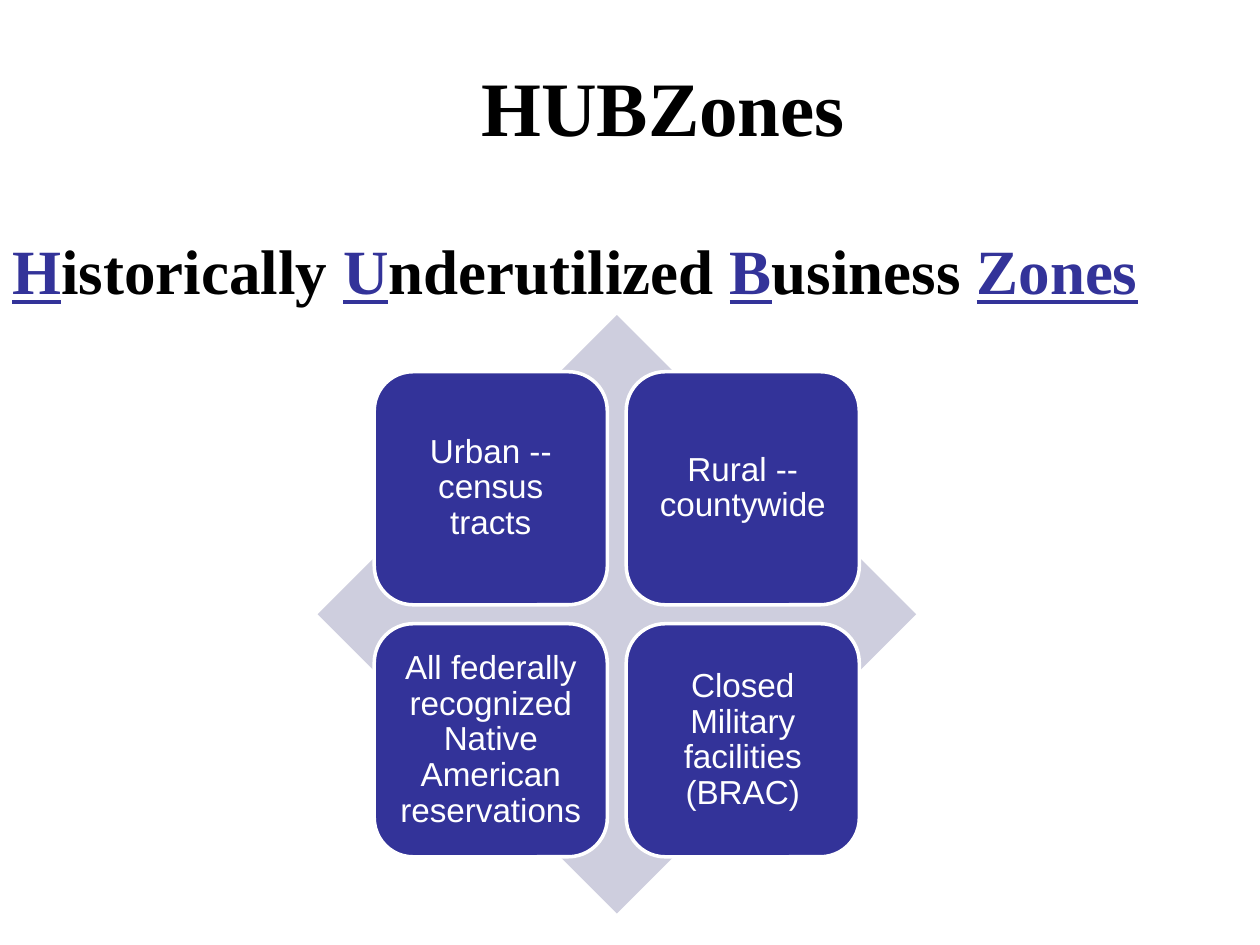
from dataclasses import dataclass
from itertools import product

from pptx import Presentation
from pptx.dml.color import RGBColor
from pptx.enum.shapes import MSO_SHAPE
from pptx.enum.text import MSO_ANCHOR, PP_ALIGN
from pptx.util import Inches, Pt


@dataclass(frozen=True)
class Theme:
    """Colours, fonts and type sizes of the slide."""
    ink: RGBColor = RGBColor(0x00, 0x00, 0x00)
    accent: RGBColor = RGBColor(0x33, 0x33, 0x99)
    pale: RGBColor = RGBColor(0xCE, 0xCE, 0xDE)
    white: RGBColor = RGBColor(0xFF, 0xFF, 0xFF)
    serif: str = "Times New Roman"
    sans: str = "Arial"
    title: int = 44
    title_gap: int = 40
    subtitle: int = 36
    card: int = 19


THEME = Theme()

ACRONYM = [("H", "istorically "), ("U", "nderutilized "),
           ("B", "usiness "), ("Zones", "")]
ZONES = ["Urban -- census tracts", "Rural -- countywide",
         "All federally recognized Native American reservations",
         "Closed Military facilities (BRAC)"]


def add_text_box(s, left, top, width, height):
    """Add a wrapping text box and return its first paragraph."""
    tf = s.shapes.add_textbox(Inches(left), Inches(top),
                              Inches(width), Inches(height)).text_frame
    tf.word_wrap = True
    return tf.paragraphs[0]


def add_run(p, text, size, color, bold=True, underline=False, font=THEME.serif):
    """Append a formatted run to a paragraph."""
    r = p.add_run()
    r.text = text
    r.font.name, r.font.size = font, Pt(size)
    r.font.bold, r.font.underline = bold, underline
    r.font.color.rgb = color


def add_filled_shape(s, kind, left, top, side, fill):
    """Add a square-framed preset shape with a flat fill and no line."""
    sp = s.shapes.add_shape(kind, Inches(left), Inches(top),
                            Inches(side), Inches(side))
    sp.shadow.inherit = False
    sp.fill.solid()
    sp.fill.fore_color.rgb = fill
    sp.line.fill.background()
    return sp


def add_card(s, left, top, side, text):
    """Add a rounded card with centred text."""
    sp = add_filled_shape(s, MSO_SHAPE.ROUNDED_RECTANGLE, left, top, side,
                          THEME.accent)
    sp.line.color.rgb = THEME.white
    sp.line.width = Pt(2)
    tf = sp.text_frame
    tf.word_wrap = True
    tf.vertical_anchor = MSO_ANCHOR.MIDDLE
    tf.margin_left = tf.margin_right = Inches(0.08)
    tf.margin_top = tf.margin_bottom = Inches(0.08)
    p = tf.paragraphs[0]
    p.alignment = PP_ALIGN.CENTER
    p.line_spacing = 0.9
    add_run(p, text, THEME.card, THEME.white, bold=False, font=THEME.sans)


def add_headings(s):
    """Add the title and the spelled-out acronym."""
    p = add_text_box(s, 1, 0.42, 8.67, 0.84)
    p.alignment = PP_ALIGN.CENTER
    add_run(p, "HUBZones", THEME.title, THEME.ink)
    add_run(p, " ", THEME.title_gap, THEME.ink)

    p = add_text_box(s, 0, 1.79, 10, 0.71)
    for initial, rest in ACRONYM:
        add_run(p, initial, THEME.subtitle, THEME.accent, underline=True)
        if rest:
            add_run(p, rest, THEME.subtitle, THEME.ink)


def add_zone_matrix(s):
    """Add the diamond with its two-by-two grid of cards."""
    left, top, side, inset, step = 2.52, 2.5, 4.75, 0.45, 2
    add_filled_shape(s, MSO_SHAPE.DIAMOND, left, top, side, THEME.pale)
    for (row, col), text in zip(product(range(2), repeat=2), ZONES):
        add_card(s, left + inset + col * step, top + inset + row * step,
                 1.85, text)


def main():
    """Build and save the slide."""
    prs = Presentation()
    prs.slide_width, prs.slide_height = Inches(10), Inches(7.5)
    s = prs.slides.add_slide(prs.slide_layouts[6])
    add_headings(s)
    add_zone_matrix(s)
    prs.save("out.pptx")


if __name__ == "__main__":
    main()
